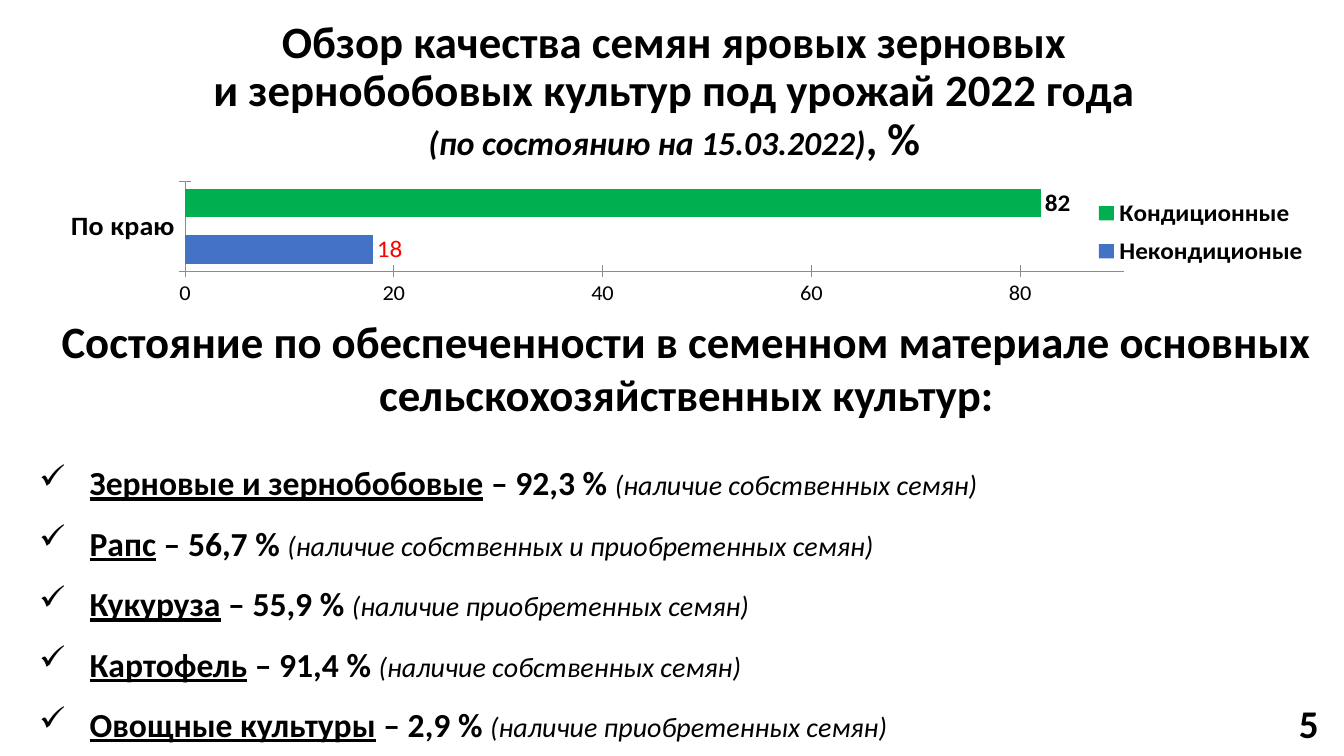
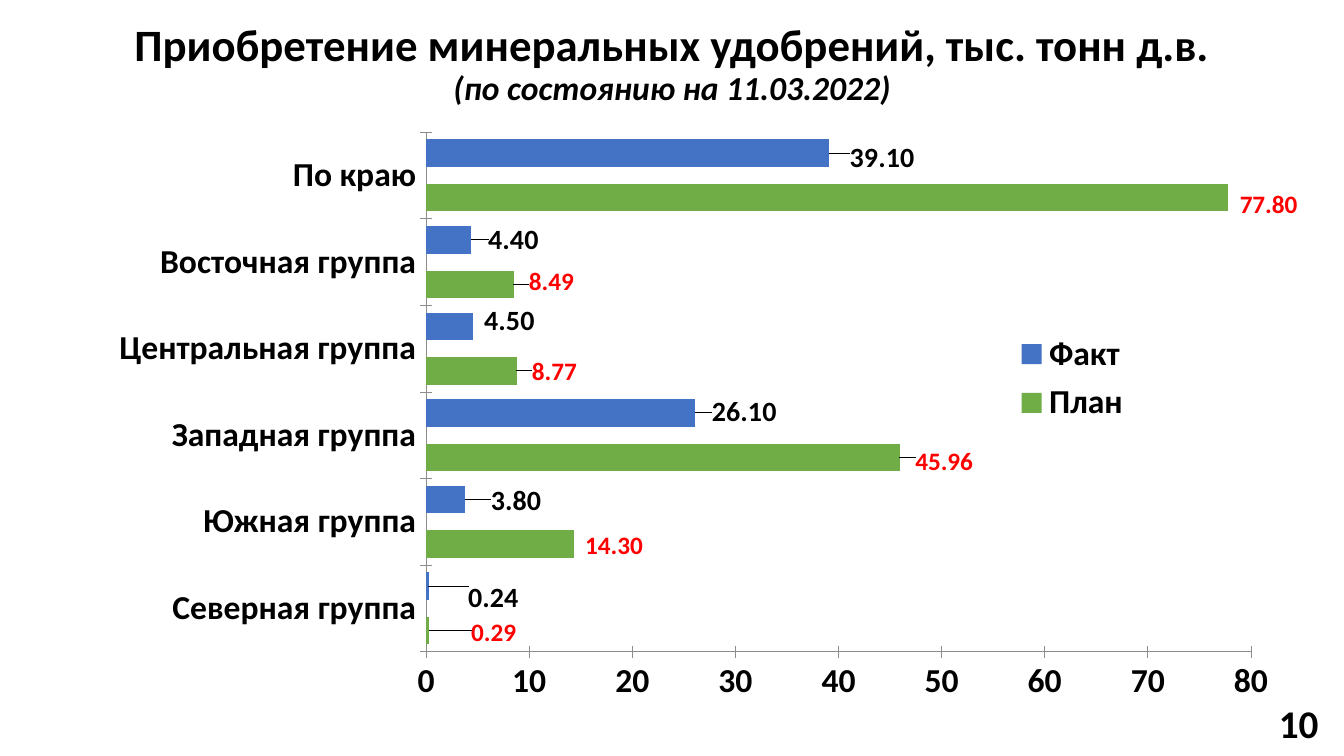
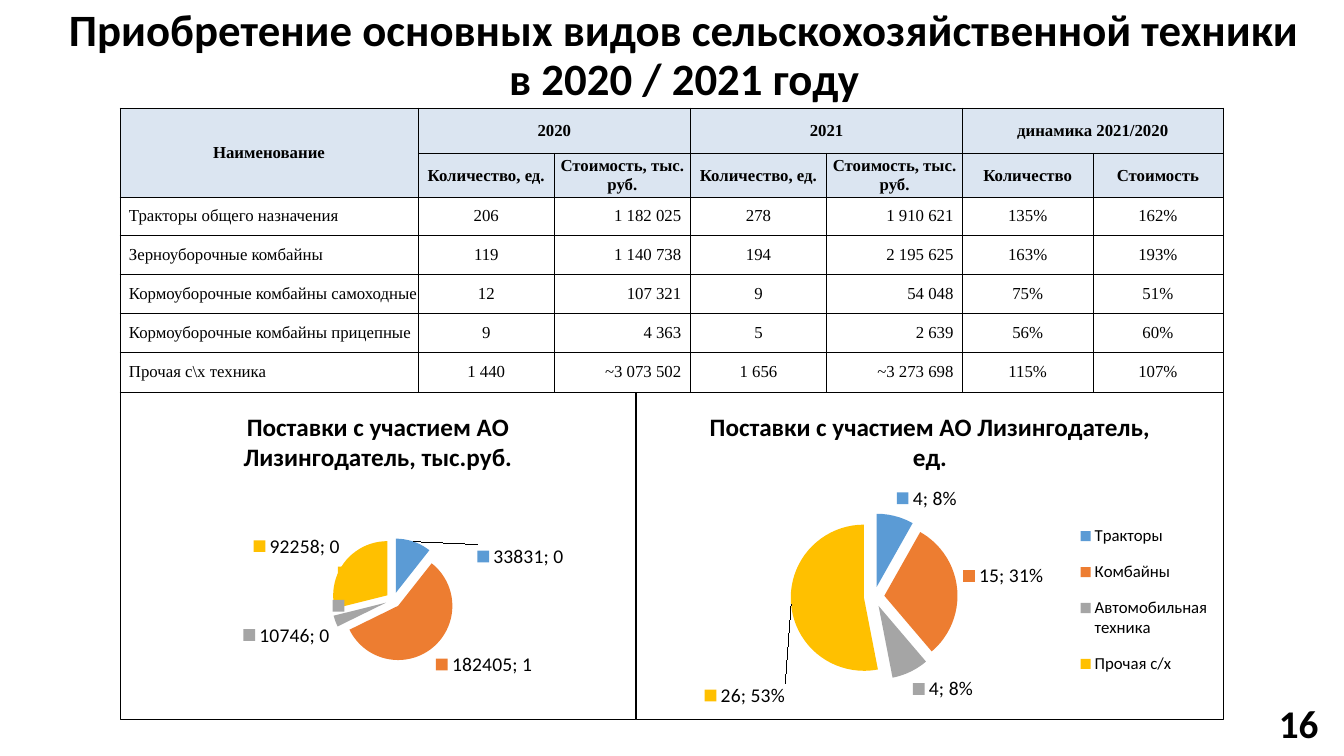
from dataclasses import dataclass, field

from pptx import Presentation
from pptx.chart.data import CategoryChartData
from pptx.dml.color import RGBColor
from pptx.enum.chart import XL_CHART_TYPE, XL_LABEL_POSITION, XL_LEGEND_POSITION, XL_TICK_MARK
from pptx.enum.text import MSO_ANCHOR, PP_ALIGN
from pptx.oxml import parse_xml
from pptx.oxml.ns import nsdecls, qn
from pptx.util import Cm, Pt


@dataclass(frozen=True)
class Theme:
    font: str = "Calibri"
    table_font: str = "Times New Roman"
    black: str = "000000"
    white: str = "FFFFFF"
    red: str = "FF0000"
    blue: str = "4472C4"
    green: str = "00B050"
    leaf: str = "70AD47"
    axis: str = "8C8C8C"
    header: str = "DBE5F1"
    slices: tuple = ("5B9BD5", "ED7D31", "A5A5A5", "FFC000")
    title: int = 32
    subtitle: int = 24
    page: int = 28
    item: int = 24
    note: int = 20
    chart: int = 18
    pie_label: int = 14
    small: int = 12


T = Theme()
OUTSIDE = XL_LABEL_POSITION.OUTSIDE_END


@dataclass
class Series:
    """One data row; nudges maps a point to its label shift in percent of the chart."""
    name: str
    values: tuple
    color: str = ""
    label: dict = field(default_factory=dict)
    fmt: str = "General"
    position: object = OUTSIDE
    nudges: dict = field(default_factory=dict)
    frame: str = ""


def style(font, **values):
    for key, value in {"name": T.font, "color": T.black, **values}.items():
        if key == "color":
            font.color.rgb = RGBColor.from_string(value)
        else:
            setattr(font, key, Pt(value) if key == "size" else value)


def outline(color, width):
    return parse_xml(
        f'<c:spPr {nsdecls("c", "a")}><a:ln w="{Pt(width)}"><a:solidFill>'
        f'<a:srgbClr val="{color}"/></a:solidFill></a:ln></c:spPr>')


def place(parent, index, x, y, w=None, h=None):
    """Give a chart part a manual layout; without a size, x and y are shifts."""
    for old in parent.findall(qn("c:layout")):
        parent.remove(old)
    parts = []
    if parent.tag == qn("c:plotArea"):
        parts.append(("layoutTarget", "inner"))
    if w:
        parts += [("xMode", "edge"), ("yMode", "edge")]
    parts += [("x", x), ("y", y)]
    if w:
        parts += [("w", w), ("h", h)]
    body = "".join(f'<c:{tag} val="{value}"/>' for tag, value in parts)
    parent.insert(index, parse_xml(
        f'<c:layout {nsdecls("c")}><c:manualLayout>{body}</c:manualLayout></c:layout>'))


class Deck:
    def __init__(self):
        self.prs = Presentation()
        self.prs.slide_width, self.prs.slide_height = Cm(33.87), Cm(19.05)
        self.s = None

    def slide(self, number):
        self.s = self.prs.slides.add_slide(self.prs.slide_layouts[6])
        self.text((29.95, 17.7, 3.53, 1.02), [[(str(number), {"size": T.page})]],
                  align=PP_ALIGN.RIGHT)

    def runs(self, p, runs, **base):
        for text, values in runs:
            for i, line in enumerate(text.split("\n")):
                if i:
                    p.add_line_break()
                if line:
                    r = p.add_run()
                    r.text = line
                    style(r.font, **{**base, **values})

    def text(self, box, paragraphs, align=PP_ALIGN.CENTER, anchor=MSO_ANCHOR.MIDDLE, spacing=1.0):
        tf = self.s.shapes.add_textbox(*map(Cm, box)).text_frame
        tf.word_wrap, tf.vertical_anchor = True, anchor
        for i, runs in enumerate(paragraphs):
            p = tf.paragraphs[0] if i == 0 else tf.add_paragraph()
            p.alignment, p.line_spacing = align, spacing
            self.runs(p, runs, bold=True)
        return tf

    def title(self, box, *runs):
        self.text(box, [[(text, {"size": T.title, **values}) for text, values in runs]],
                  spacing=0.9)

    def checklist(self, box, heading, items):
        rows = [[(name, {"size": T.item, "underline": True}),
                 (f" – {share} % ", {"size": T.item}),
                 (f"({note})", {"size": T.note, "bold": False, "italic": True})]
                for name, share, note in items]
        tf = self.text(box, [[(heading, {"size": T.title})]] + rows, anchor=MSO_ANCHOR.TOP)
        tf.paragraphs[0].space_after = Pt(15)
        for p in tf.paragraphs[1:]:
            p.alignment, p.line_spacing = PP_ALIGN.LEFT, 1.5
            pPr = p._p.get_or_add_pPr()
            pPr.set("marL", str(Cm(1.27)))
            pPr.set("indent", str(-Cm(1.27)))
            pPr.append(parse_xml(f'<a:buChar {nsdecls("a")} char="✓"/>'))

    def chart(self, kind, box, categories, rows, plot, legend=None, legend_font=None):
        data = CategoryChartData()
        data.categories = categories
        for row in rows:
            data.add_series(row.name, row.values)
        chart = self.s.shapes.add_chart(kind, *map(Cm, box), data).chart
        style(chart.font, size=T.chart)
        chart.has_title = False
        chart.has_legend = bool(legend)
        if legend:
            chart.legend.position = XL_LEGEND_POSITION.RIGHT
            chart.legend.include_in_layout = False
            style(chart.legend.font, **legend_font)
            place(chart.element.xpath(".//c:legend")[0], 1, *legend)
        place(chart.element.xpath(".//c:plotArea")[0], 0, *plot)
        chart.plots[0].vary_by_categories = kind == XL_CHART_TYPE.PIE
        for row, series, ser in zip(rows, chart.plots[0].series, chart.element.xpath(".//c:ser")):
            if row.color:
                series.format.fill.solid()
                series.format.fill.fore_color.rgb = RGBColor.from_string(row.color)
            self.labels(row, series, ser)
        return chart

    def labels(self, row, series, ser):
        labels = series.data_labels
        labels.show_value = True
        labels.number_format, labels.number_format_is_linked = row.fmt, False
        for label in [labels] + [series.points[i].data_label for i in row.nudges]:
            style(label.font, **row.label)
            label.position = row.position
        for dLbl, (x, y) in zip(ser.findall(".//" + qn("c:dLbl")), row.nudges.values()):
            place(dLbl, 1, x / 100, y / 100)
            dLbl.insert(2, parse_xml(
                f'<c:numFmt {nsdecls("c")} formatCode="{row.fmt}" sourceLinked="0"/>'))
            if row.frame:
                dLbl.insert(3, outline(row.frame, 2.25))

    def bars(self, box, categories, rows, limits, axis_fonts, **layout):
        chart = self.chart(XL_CHART_TYPE.BAR_CLUSTERED, box, categories, rows, **layout)
        chart.plots[0].gap_width, chart.plots[0].overlap = 53, -62
        for axis, font in zip((chart.category_axis, chart.value_axis), axis_fonts):
            axis.has_major_gridlines = False
            axis.major_tick_mark = XL_TICK_MARK.CROSS
            axis.format.line.color.rgb = RGBColor.from_string(T.axis)
            axis.format.line.width = Pt(0.5)
            style(axis.tick_labels.font, **font)
        axis = chart.value_axis
        axis.minimum_scale, axis.maximum_scale, axis.major_unit = limits
        axis.tick_labels.number_format = "0"
        axis.tick_labels.number_format_is_linked = False

    def pie(self, box, title, categories, row, **layout):
        chart = self.chart(XL_CHART_TYPE.PIE, box, categories, [row], **layout)
        chart.has_title = True
        self.runs(chart.chart_title.text_frame.paragraphs[0], [(title, {})],
                  size=T.chart, bold=True)
        chart.element.find(qn("c:chart")).addnext(outline(T.black, 0.75))
        for i, color in enumerate(T.slices):
            fill = chart.plots[0].series[0].points[i].format.fill
            fill.solid()
            fill.fore_color.rgb = RGBColor.from_string(color)
        chart.element.xpath(".//c:ser/c:tx")[0].addnext(
            parse_xml(f'<c:explosion {nsdecls("c")} val="14"/>'))
        for label in chart.element.xpath(".//c:dLbls | .//c:dLbl"):
            for tag in ("c:showLegendKey", "c:showPercent"):
                label.find(qn(tag)).set("val", "1")
            label.find(qn("c:showBubbleSize")).addnext(
                parse_xml(f'<c:separator {nsdecls("c")}>; </c:separator>'))

    def table(self, left, top, widths, heights, rows, merges, header_rows):
        table = self.s.shapes.add_table(len(rows), len(widths), Cm(left), Cm(top),
                                        Cm(sum(widths)), Cm(sum(heights))).table
        table.first_row = table.horz_banding = False
        for col, width in zip(table.columns, widths):
            col.width = Cm(width)
        for row, height in zip(table.rows, heights):
            row.height = Cm(height)
        for first, last in merges:
            table.cell(*first).merge(table.cell(*last))
        for i, row in enumerate(rows):
            for j, text in enumerate(row):
                self.cell(table.cell(i, j), text, j, i < header_rows)

    def cell(self, cell, text, column, header):
        align = PP_ALIGN.CENTER
        margins = dict.fromkeys(("left", "right", "top", "bottom"), 0)
        if not header and column == 0:
            align, margins["left"] = PP_ALIGN.LEFT, 0.23
        elif not header and column in (2, 4):
            align, margins["right"] = PP_ALIGN.RIGHT, 0.23
        for side, margin in margins.items():
            setattr(cell, f"margin_{side}", Cm(margin))
        cell.vertical_anchor = MSO_ANCHOR.MIDDLE
        p = cell.text_frame.paragraphs[0]
        p.alignment = align
        self.runs(p, [(text, {})], name=T.table_font, size=T.small, bold=header)
        cell.fill.solid()
        cell.fill.fore_color.rgb = RGBColor.from_string(T.header if header else T.white)
        tcPr = cell._tc.get_or_add_tcPr()
        for i, side in enumerate("LRTB"):
            tcPr.insert(i, parse_xml(
                f'<a:ln{side} {nsdecls("a")} w="{Pt(0.5)}"><a:solidFill>'
                f'<a:srgbClr val="{T.black}"/></a:solidFill></a:ln{side}>'))


def seeds(deck):
    deck.slide(5)
    deck.title((0.13, 0.91, 33.73, 2.84),
               ("Обзор качества семян яровых зерновых\n"
                "и зернобобовых культур под урожай 2022 года\n", {}),
               ("(по состоянию на 15.03.2022)", {"size": T.subtitle, "italic": True}),
               (", %", {}))
    deck.bars((1.14, 4.47, 32, 3.25), ["По краю"],
              [Series("Некондиционые", (18,), T.blue, {"size": 18, "color": T.red}, "0"),
               Series("Кондиционные", (82,), T.green, {"size": 18, "bold": True}, "0")],
              (0, 90, 20), ({"size": 20, "bold": True}, {"size": 16}),
              plot=(0.11, 0.03, 0.74, 0.74), legend=(0.82, 0.1, 0.18, 0.7),
              legend_font={"size": 18, "bold": True})
    deck.checklist(
        (0.74, 7.77, 33.13, 11.2),
        "Состояние по обеспеченности в семенном материале основных сельскохозяйственных культур:",
        [("Зерновые и зернобобовые", "92,3", "наличие собственных семян"),
         ("Рапс", "56,7", "наличие собственных и приобретенных семян"),
         ("Кукуруза", "55,9", "наличие приобретенных семян"),
         ("Картофель", "91,4", "наличие собственных семян"),
         ("Овощные культуры", "2,9", "наличие приобретенных семян")])


def fertilizers(deck):
    deck.slide(10)
    deck.title((0.94, 0.3, 32, 2.7),
               ("Приобретение минеральных удобрений, тыс. тонн д.в.\n", {}),
               ("(по состоянию на 11.03.2022)", {"size": T.subtitle, "italic": True}))
    plan_shifts = [(3, 0.3), (0.6, 0.2), (0.9, 0.7), (0.9, 0.2), (0.9, -0.5), (0.6, 1.2)]
    fact_shifts = [(2.8, 2), (1.7, 0.2), (1, -0.3), (0.6, -1), (1, 0), (1.3, 0.7)]
    bold = {"size": 24, "bold": True}
    deck.bars((1.32, 2.92, 31.93, 14.78),
              ["Северная группа", "Южная группа", "Западная группа",
               "Центральная группа", "Восточная группа", "По краю"],
              [Series("План", (0.29, 14.3, 45.96, 8.77, 8.49, 77.8), T.leaf,
                      {"size": 18, "bold": True, "color": T.red}, "0.00",
                      nudges=dict(enumerate(plan_shifts))),
               Series("Факт", (0.24, 3.8, 26.1, 4.5, 4.4, 39.1), T.blue,
                      {"size": 20, "bold": True}, "0.00",
                      nudges=dict(enumerate(fact_shifts)), frame=T.green)],
              (0, 80, 10), (bold, bold), plot=(0.295, 0.028, 0.651, 0.89),
              legend=(0.74, 0.36, 0.13, 0.18), legend_font=bold)


def machinery(deck):
    deck.slide(16)
    deck.title((0.94, 0, 32.61, 2.84),
               ("Приобретение основных видов сельскохозяйственной техники\n"
                "в 2020 / 2021 году", {}))
    label = {"size": T.pie_label}
    supplies = "Поставки с участием АО Лизингодатель, "
    deck.pie((16.03, 9.88, 14.81, 8.26), supplies + "ед.",
             ["Тракторы", "Комбайны", "Автомобильная техника", "Прочая с/х"],
             Series("Единицы", (4, 15, 4, 26), label=label, nudges={3: (0, 24)}),
             plot=(0.26, 0.37, 0.29, 0.51), legend=(0.74, 0.36, 0.25, 0.55),
             legend_font={"size": T.small})
    deck.pie((3.02, 9.88, 13.01, 8.26), supplies + "тыс.руб.", ["1", "2", "3", "4"],
             Series("Стоимость", (33831, 182405, 10746, 92258), label=label, fmt="#,##0",
                    position=XL_LABEL_POSITION.BEST_FIT, nudges={0: (12, 10)}),
             plot=(0.41, 0.44, 0.24, 0.39))
    amounts = ["Количество, ед.", "Стоимость, тыс. руб."]
    deck.table(
        3.02, 2.72, [7.52] + [3.43] * 4 + [3.28] * 2,
        [1.14, 1.12, 0.94, 0.99, 0.99, 0.97, 1.02],
        [["Наименование", "2020", "", "2021", "", "динамика 2021/2020", ""],
         [""] + amounts * 2 + ["Количество", "Стоимость"],
         ["Тракторы общего назначения", "206", "1 182 025", "278", "1 910 621", "135%", "162%"],
         ["Зерноуборочные комбайны", "119", "1 140 738", "194", "2 195 625", "163%", "193%"],
         ["Кормоуборочные комбайны самоходные", "12", "107 321", "9", "54 048", "75%", "51%"],
         ["Кормоуборочные комбайны прицепные", "9", "4 363", "5", "2 639", "56%", "60%"],
         ["Прочая с\\х техника", "1 440", "~3 073 502", "1 656", "~3 273 698", "115%", "107%"]],
        [((0, 0), (1, 0))] + [((0, j), (0, j + 1)) for j in (1, 3, 5)], header_rows=2)


def main():
    deck = Deck()
    for build in (seeds, fertilizers, machinery):
        build(deck)
    deck.prs.save("out.pptx")


if __name__ == "__main__":
    main()
